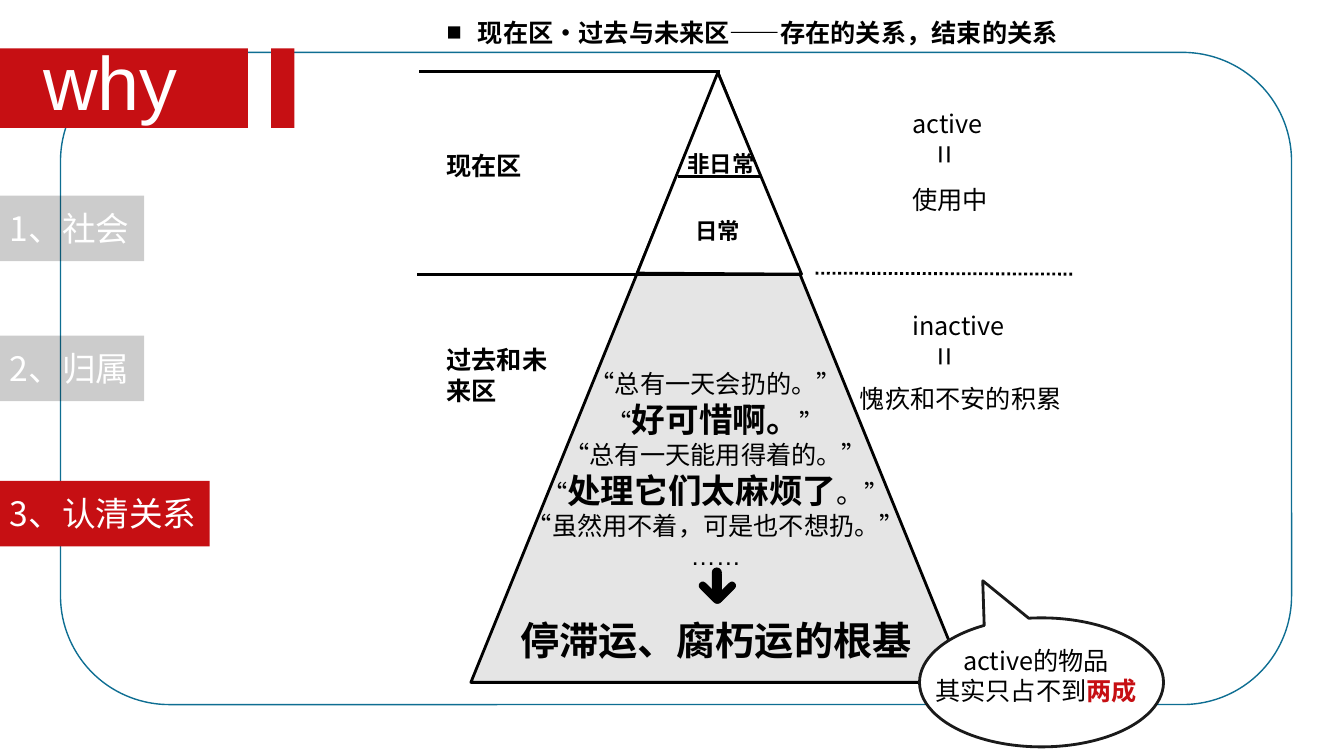
from pptx import Presentation
from pptx.dml.color import RGBColor
from pptx.enum.dml import MSO_LINE
from pptx.enum.shapes import MSO_CONNECTOR, MSO_SHAPE
from pptx.enum.text import MSO_ANCHOR, MSO_AUTO_SIZE, PP_ALIGN
from pptx.oxml.ns import qn
from pptx.util import Inches, Pt
from lxml.etree import SubElement

HUES = {"ink": "000000", "paper": "FFFFFF", "red": "C60F13", "frame": "0E6E92",
        "pale": "808080", "edge": "1A1A1A"}
SANS = "Noto Sans CJK SC"
BOLD = {"bold": True}
BIG = {"bold": True, "size": 24}


class Pen:
    def __init__(self, slide):
        self.slide = slide
        self.root = slide.shapes
        self.base = {"name": SANS, "size": 18, "bold": False, "hue": "ink"}

    def hue(self, key):
        return RGBColor.from_string(HUES[key])

    def paint(self, item, fill, line=None, width=2, alpha=None):
        item.shadow.inherit = False
        item.fill.solid()
        item.fill.fore_color.rgb = self.hue(fill)
        if alpha:
            tint = item._element.spPr.find(qn("a:solidFill"))[0]
            SubElement(tint, qn("a:alpha")).set("val", str(alpha * 1000))
        if line:
            item.line.color.rgb = self.hue(line)
            item.line.width = Pt(width)
        else:
            item.line.fill.background()
        return item

    def shape(self, kind, box, fill, line=None, width=2, alpha=None, turn=0, bends=()):
        item = self.root.add_shape(kind, *map(Inches, box))
        item.rotation = turn
        for spot, bend in enumerate(bends):
            item.adjustments[spot] = bend
        return self.paint(item, fill, line, width, alpha)

    def outline(self, dots, fill, line):
        first, *rest = [(Inches(x), Inches(y)) for x, y in dots]
        draft = self.root.build_freeform(*first)
        draft.add_line_segments(rest, close=True)
        return self.paint(draft.convert_to_shape(), fill, line)

    def rule(self, start, end, dash=None):
        item = self.root.add_connector(MSO_CONNECTOR.STRAIGHT, *map(Inches, start + end))
        item.line.color.rgb = self.hue("ink")
        item.line.width = Pt(2)
        if dash:
            item.line.dash_style = dash
        SubElement(item._element.spPr, qn("a:effectLst"))

    def style(self, run, look):
        font = run.font
        for key, value in {**self.base, **look}.items():
            if key == "hue":
                font.color.rgb = self.hue(value)
            else:
                setattr(font, key, Pt(value) if key == "size" else value)
        SubElement(font._element, qn("a:ea")).set("typeface", font.name)

    def words(self, item, lines, look, align):
        frame = item.text_frame
        form = {"word_wrap": True, "auto_size": MSO_AUTO_SIZE.NONE,
                "vertical_anchor": MSO_ANCHOR.TOP}
        for key, value in form.items():
            setattr(frame, key, value)
        for spot, line in enumerate(lines):
            para = frame.add_paragraph() if spot else frame.paragraphs[0]
            para.alignment = align
            para.space_before = Pt(0)
            for part in [line] if isinstance(line, str) else line:
                text, more = (part, {}) if isinstance(part, str) else part
                run = para.add_run()
                run.text = text
                self.style(run, {**look, **more})
        return frame

    def text(self, box, lines, look={}, align=PP_ALIGN.LEFT, turn=0):
        item = self.root.add_textbox(*map(Inches, box))
        item.rotation = turn
        return self.words(item, lines, look, align)

    def holder(self, item, box, lines, look):
        for key, value in zip(("left", "top", "width", "height"), box):
            setattr(item, key, Inches(value))
        self.slide.shapes._spTree.append(item._element)
        return self.words(item, lines, look, PP_ALIGN.LEFT)

    def bullet(self, para, mark, gap):
        props = para._p.get_or_add_pPr()
        props.set("marL", str(Inches(gap)))
        props.set("indent", str(-Inches(gap)))
        SubElement(props, qn("a:buFont")).set("typeface", "Arial")
        SubElement(props, qn("a:buChar")).set("char", mark)

    def arrow(self):
        main = self.root
        self.root = main.add_group_shape().shapes
        bar, dot = MSO_SHAPE.ROUNDED_RECTANGLE, MSO_SHAPE.OVAL
        self.shape(bar, (7.06, 5.68, 0.1, 0.25), "ink")
        for top in (5.87, 5.63):
            self.shape(dot, (7.06, top, 0.1, 0.1), "ink")
        for turn, left, low, high in ((45, 7.15, 7.08, 7.22), (315, 7, 7.07, 6.93)):
            self.shape(bar, (left, 5.78, 0.08, 0.2), "ink", turn=turn)
            self.shape(dot, (low, 5.91, 0.08, 0.08), "ink", turn=turn)
            self.shape(dot, (high, 5.77, 0.08, 0.08), "ink", turn=turn)
        self.root = main


def main():
    deck = Presentation()
    deck.slide_width, deck.slide_height = Inches(13.33), Inches(7.5)
    slide = deck.slides.add_slide(deck.slide_layouts[1])
    pen = Pen(slide)
    mid = PP_ALIGN.CENTER

    pen.shape(MSO_SHAPE.ROUNDED_RECTANGLE, (0.6, 0.52, 12.21, 6.47), "paper", "frame", 1)
    pen.shape(MSO_SHAPE.ISOSCELES_TRIANGLE, (4.67, 0.73, 4.91, 6.04), "pale", "ink", alpha=20)
    pen.outline([(7.12, 0.72), (6.32, 2.71), (7.95, 2.72)], "paper", "ink")
    pen.rule((6.72, 1.75), (7.54, 1.75))
    pen.rule((4.16, 0.71), (7.14, 0.71))
    pen.rule((4.14, 2.72), (7.94, 2.72))
    pen.rule((8.09, 2.71), (10.64, 2.72), MSO_LINE.ROUND_DOT)

    for top, word, left, wide, low, note in (
            (1.03, "active", 8.95, 1.46, 1.78, "使用中"),
            (3.03, "inactive", 8.43, 2.76, 3.75, "愧疚和不安的积累")):
        pen.text((8.95, top, 1.29, 0.4), [word])
        pen.text((9.17, top + 0.28, 0.43, 0.5), ["="], {"size": 24}, turn=90)
        pen.text((left, low, wide, 0.4), [note])

    pen.text((4.33, 1.44, 1.35, 0.4), ["现在区"], BOLD)
    pen.text((4.33, 3.37, 1.35, 0.71), ["过去和未来区"], BOLD)
    frame = pen.text((5.03, 3.61, 4.14, 3.06), [
        "“总有一天会扔的。”",
        ["“", ("好可惜啊。", BIG), "”"],
        "“总有一天能用得着的。”",
        ["“", ("处理它们太麻烦了", BIG), ("。", {"size": 20}), "”"],
        "“虽然用不着，可是也不想扔。”",
        [("……", {"name": "Arial"})],
        [("停滞运、腐朽运的根基", {"bold": True, "size": 28})],
    ], align=mid)
    frame.paragraphs[-1].space_before = Pt(33)

    pen.shape(MSO_SHAPE.OVAL_CALLOUT, (9.12, 6.13, 2.42, 1.28), "paper", "edge",
              bends=(-0.241, -0.788))
    pen.text((9.12, 6.35, 2.31, 0.71), [
        "active的物品", ["其实只占不到", ("两成", {"hue": "red", "bold": True})]], align=mid)

    head = pen.holder(slide.placeholders[1], (4.33, 0.12, 6.77, 0.4),
                      ["现在区•过去与未来区——存在的关系，结束的关系"], BOLD)
    pen.bullet(head.paragraphs[0], "■", 0.31)
    pen.arrow()

    for top, wide, fill, alpha, label in (
            (1.94, 1.43, "ink", 20, "1、社会"),
            (3.33, 1.43, "ink", 20, "2、归属"),
            (4.77, 2.08, "red", None, "3、认清关系")):
        pen.shape(MSO_SHAPE.RECTANGLE, (0, top, wide, 0.65), fill, alpha=alpha)
        pen.text((0, top + 0.07, 2.24, 0.5), [label], {"size": 24, "hue": "paper"})

    pen.text((6.72, 1.44, 1.19, 0.37), ["非日常"], {"bold": True, "size": 16})
    pen.text((6.52, 2.11, 1.19, 0.37), ["日常"], {"bold": True, "size": 16}, mid)

    for left, wide in ((0, 2.46), (2.69, 0.23)):
        pen.shape(MSO_SHAPE.RECTANGLE, (left, 0.48, wide, 0.79), "red")
    pen.holder(slide.shapes.title, (0.33, 0.3, 1.95, 1.01), ["why"],
               {"name": "Arial", "size": 54, "hue": "paper"})
    deck.save("out.pptx")


if __name__ == "__main__":
    main()
